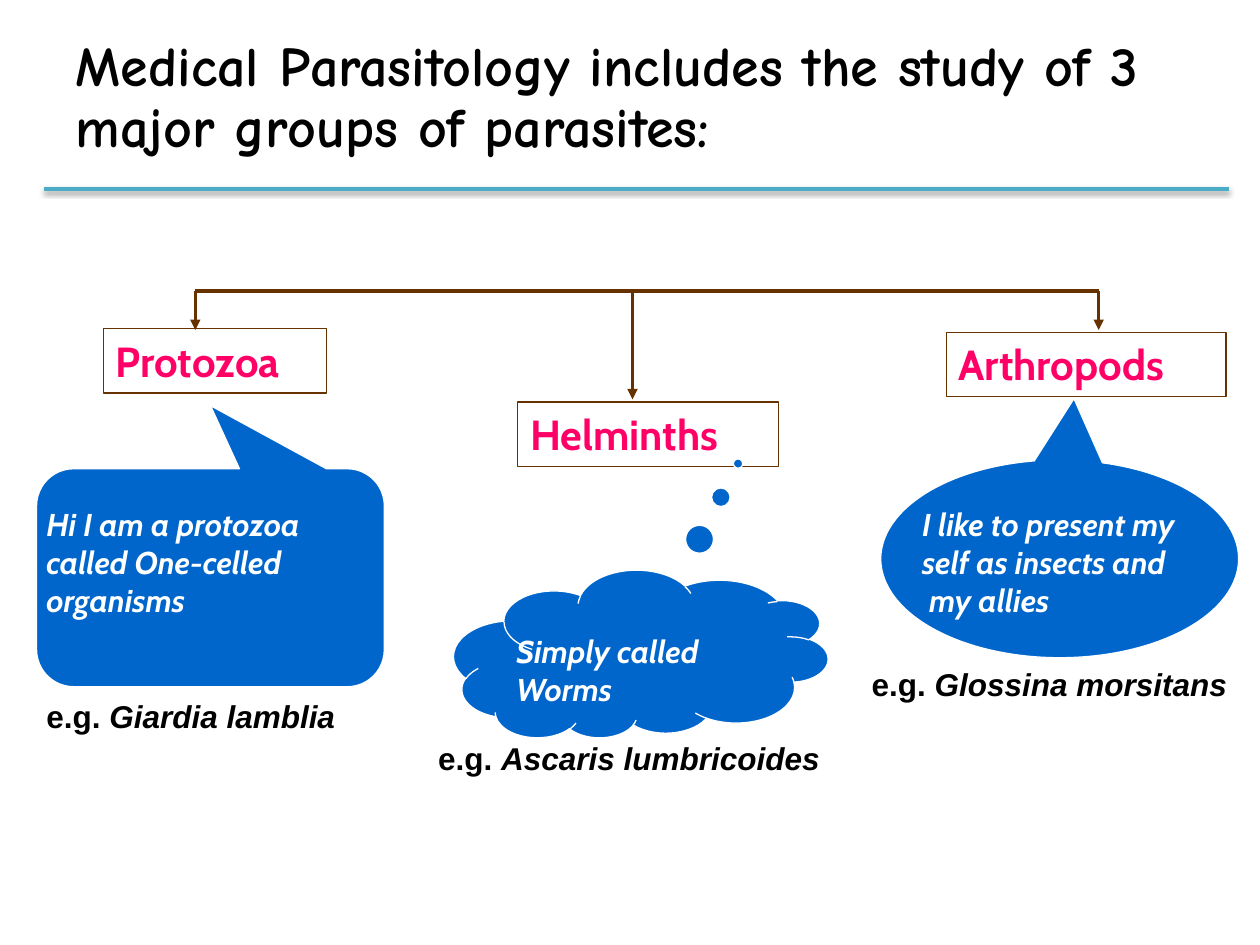
from lxml import etree
from pptx import Presentation
from pptx.dml.color import RGBColor as RGB
from pptx.enum.shapes import MSO_CONNECTOR as CONN, MSO_SHAPE as SHAPE
from pptx.enum.text import MSO_ANCHOR as ANCHOR, PP_ALIGN as ALIGN
from pptx.oxml import parse_xml
from pptx.oxml.ns import nsdecls, qn
from pptx.util import Inches, Pt

C = {"rule": "4BACC6", "brown": "663300", "pink": "FF0066",
     "blue": "0066CC", "white": "FFFFFF", "black": "000000"}

prs = Presentation()
prs.slide_width, prs.slide_height = Inches(10), Inches(7.5)
COL, ROW = prs.slide_width / 100, prs.slide_height / 75
s = prs.slides.add_slide(prs.slide_layouts[5])


def write(sp, runs, size, font, color, bold=True, italic=None):
    """Fill a shape with one left-aligned paragraph of (text, italic) runs."""
    tf = sp.text_frame
    tf.word_wrap = True
    p = tf.paragraphs[0]
    p.alignment = ALIGN.LEFT
    p.font.size, p.font.name = Pt(size), font
    p.font.bold, p.font.italic = bold, italic
    p.font.color.rgb = RGB.from_string(C[color])
    for i, (text, slanted) in enumerate(runs):
        for j, line in enumerate(text.split("\n")):
            if j:
                p.add_line_break()
            r = p.add_run()
            r.text, r.font.italic = line, slanted
    return p


def connect(x1, y1, x2, y2, color, arrow=False):
    """Draw a 2 pt line between grid points and return its empty effect list."""
    ln = s.shapes.add_connector(CONN.STRAIGHT, *(
        round(v) for v in (x1 * COL, y1 * ROW, x2 * COL, y2 * ROW)))
    ln.line.width = Pt(2)
    ln.line.color.rgb = RGB.from_string(C[color])
    if arrow:
        etree.SubElement(ln.line._get_or_add_ln(), qn("a:tailEnd"), type="triangle")
    return etree.SubElement(ln._element.spPr, qn("a:effectLst"))


def grid(x, y, w, h):
    return round(x * COL), round(y * ROW), round(w * COL), round(h * ROW)


# Title and the shadowed rule below it
effects = connect(3.5, 15, 97.5, 15, "rule")
effects.append(parse_xml(
    f'<a:outerShdw {nsdecls("a")} blurRad="{Pt(3.1)}" dist="{Pt(1.6)}" dir="5400000" '
    'rotWithShape="0"><a:srgbClr val="000000"><a:alpha val="38000"/></a:srgbClr></a:outerShdw>'))
title = s.shapes.title
title.left, title.top, title.width, title.height = grid(5, 2.5, 88.3, 10.7)
title.text_frame.vertical_anchor = ANCHOR.MIDDLE
p = write(title, [("Medical Parasitology includes the study of 3 major groups of parasites:",
                   None)], 32, "Comic Neue", "black")
p.line_spacing = 0.9

# Tree: one bar with an arrow down to each group
BAR = 23.1
connect(87.2, BAR, 15.5, BAR, "brown")
for x, end in ((15.5, 26.2), (50.2, 31.7), (87.2, 26.2)):
    connect(x, BAR, x, end, "brown", arrow=True)

for name, box in (("Protozoa", (8.2, 26.1, 17.7, 5.1)),
                  ("Helminths", (41.1, 31.9, 20.7, 5.1)),
                  ("Arthropods", (75.1, 26.4, 22.2, 5.1))):
    sp = s.shapes.add_shape(SHAPE.RECTANGLE, *grid(*box))
    sp.shadow.inherit = False
    sp.fill.background()
    sp.line.color.rgb = RGB.from_string(C["brown"])
    sp.line.width = Pt(0.75)
    sp.text_frame.vertical_anchor = ANCHOR.TOP
    write(sp, [(name, None)], 24, "Cabin", "pink")

# Callouts, turned upside down so that they point at their group
callouts = (
    (SHAPE.ROUNDED_RECTANGULAR_CALLOUT, (2.9, 37.2, 27.6, 17.3), (0, 0.79, 0.17),
     "Hi I am a protozoa called One-celled organisms", (2.7, 39.6, 27.6, 10)),
    (SHAPE.CLOUD_CALLOUT, (36, 45.3, 29.7, 13.3), (-0.26, 1.14),
     "Simply called Worms", (40, 49.7, 22.5, 7)),
    (SHAPE.OVAL_CALLOUT, (69.9, 36.5, 28.4, 15.7), (-0.04, 0.81),
     "I like to present my self as insects and\n my allies", (72.2, 39.6, 24.4, 10)),
)
for kind, bubble, tip, speech, text_box in callouts:
    sp = s.shapes.add_shape(kind, *grid(*bubble))
    sp.shadow.inherit = False
    sp.rotation = 180
    for i, value in enumerate(tip):
        sp.adjustments[i] = value
    sp.fill.solid()
    sp.fill.fore_color.rgb = RGB.from_string(C["blue"])
    sp.line.color.rgb = RGB.from_string(C["white"])
    sp.line.width = Pt(0.75)
    tb = s.shapes.add_textbox(*grid(*text_box))
    write(tb, [(speech, None)], 18, "Cabin", "white", italic=True)

# Example species
for species, box in (("Giardia lamblia", (2.7, 54.8, 27.1, 4)),
                     ("Ascaris lumbricoides", (33.8, 58.2, 38.4, 4)),
                     ("Glossina morsitans", (68.2, 52.3, 32.5, 4))):
    tb = s.shapes.add_textbox(*grid(*box))
    write(tb, [("e.g. ", None), (species, True)], 18, "Arial", "black")

prs.save("out.pptx")
